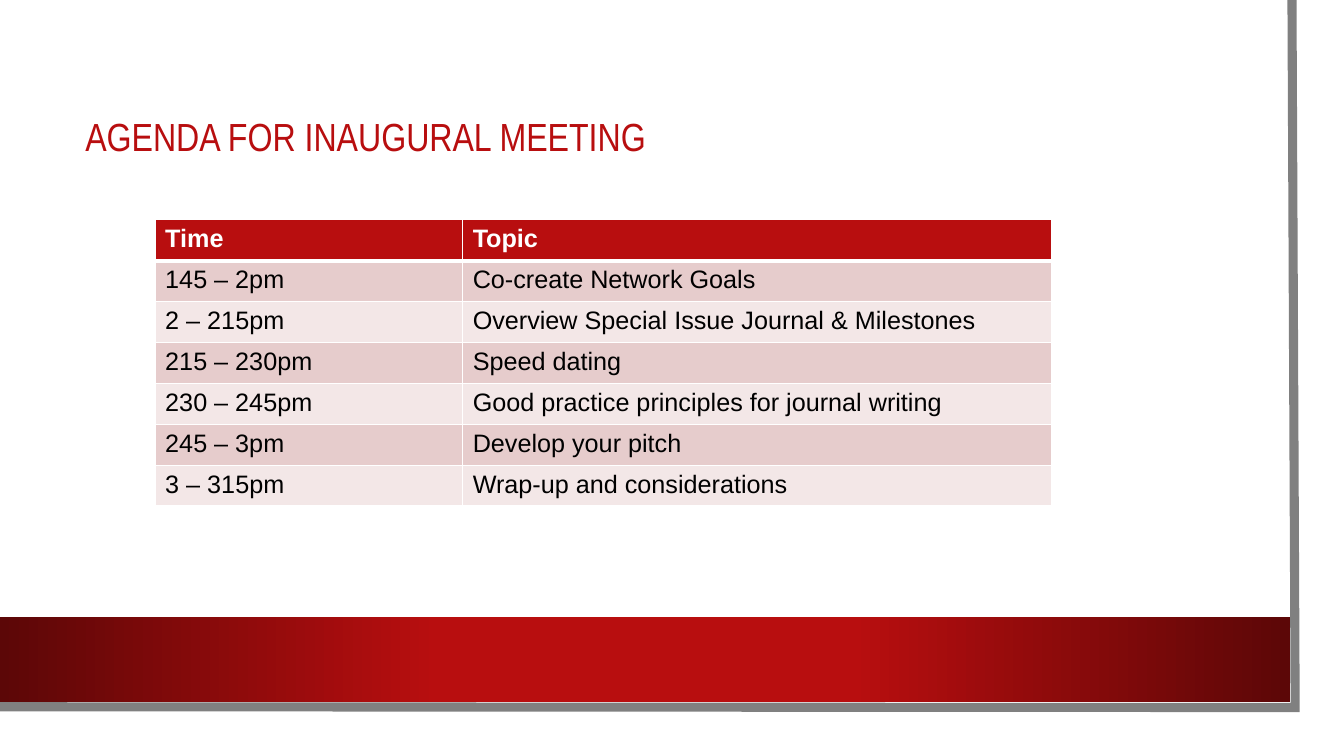
from copy import deepcopy
from dataclasses import dataclass

from lxml import etree
from pptx import Presentation
from pptx.dml.color import RGBColor
from pptx.enum.shapes import MSO_SHAPE
from pptx.enum.text import MSO_ANCHOR
from pptx.oxml.ns import qn
from pptx.util import Cm, Pt

RECTANGLE = MSO_SHAPE.RECTANGLE
MIDDLE = MSO_ANCHOR.MIDDLE


@dataclass(frozen=True)
class Theme:
    white: str = "FFFFFF"
    black: str = "000000"
    red: str = "B80E0F"
    dark_red: str = "5C0707"
    grey: str = "808080"
    stripes: tuple = ("E6CCCC", "F3E7E7")
    title_font: str = "Arial Narrow"
    body_font: str = "Arial"
    title_size: int = 28
    body_size: int = 18
    edge_width: float = 6.5
    cell_line: int = 1
    header_line: int = 3


THEME = Theme()

AGENDA = [
    ("Time", "Topic"),
    ("145 – 2pm", "Co-create Network Goals"),
    ("2 – 215pm", "Overview Special Issue Journal & Milestones"),
    ("215 – 230pm", "Speed dating"),
    ("230 – 245pm", "Good practice principles for journal writing"),
    ("245 – 3pm", "Develop your pitch"),
    ("3 – 315pm", "Wrap-up and considerations"),
]
COLUMN_WIDTHS = (7.75, 14.83)
ROW_HEIGHT = 1.03


def write(frame, text, color, **font_values):
    """Put one formatted paragraph into a text frame."""
    paragraph = frame.paragraphs[0]
    run = paragraph.add_run()
    run.text = text
    for name, value in font_values.items():
        setattr(run.font, name, value)
    run.font.color.rgb = RGBColor.from_string(color)
    return paragraph


def add_panel(slide, left, top, width, height):
    panel = slide.shapes.add_shape(
        RECTANGLE, Cm(left), Cm(top), Cm(width), Cm(height))
    panel.shadow.inherit = False
    panel.line.fill.background()
    return panel


def add_sheet(slide):
    sheet = add_panel(slide, 0, 0, 33.27, 18.47)
    sheet.fill.solid()
    sheet.fill.fore_color.rgb = RGBColor.from_string(THEME.white)


def add_edge(slide):
    """Grey line down the right side and along the bottom."""
    outline = slide.shapes.build_freeform(Cm(32.56), Cm(0))
    outline.add_line_segments(
        [(Cm(32.64), Cm(17.83)), (Cm(-0.08), Cm(17.81))], close=False)
    edge = outline.convert_to_shape()
    edge.shadow.inherit = False
    edge.fill.background()
    edge.line.color.rgb = RGBColor.from_string(THEME.grey)
    edge.line.width = Pt(THEME.edge_width)
    etree.SubElement(edge.line._get_or_add_ln(), qn("a:miter"), lim="800000")


def add_band(slide):
    """Red band that darkens towards both ends."""
    band = add_panel(slide, 0, 15.54, 32.51, 2.16)
    band.fill.gradient()
    band.fill.gradient_angle = 0
    stop_list = band._element.spPr.find(".//" + qn("a:gsLst"))
    for stop in list(stop_list):
        stop_list.append(deepcopy(stop))
    positions = (0, 0.34, 0.66, 1)
    colors = (THEME.dark_red, THEME.red, THEME.red, THEME.dark_red)
    for stop, position, color in zip(
            band.fill.gradient_stops, positions, colors):
        stop.position = position
        stop.color.rgb = RGBColor.from_string(color)


def add_title(slide, text):
    title = slide.shapes.add_textbox(Cm(1.9), Cm(1.9), Cm(28.88), Cm(3.2))
    title.text_frame.word_wrap = True
    title.text_frame.vertical_anchor = MIDDLE
    line = write(title.text_frame, text, THEME.red,
                 name=THEME.title_font, size=Pt(THEME.title_size))
    line.line_spacing = 0.9


def set_borders(cell, top, bottom):
    """Draw white borders; they precede the fill in the cell properties."""
    properties = cell._tc.get_or_add_tcPr()
    widths = {"a:lnL": THEME.cell_line, "a:lnR": THEME.cell_line,
              "a:lnT": top, "a:lnB": bottom}
    for index, (tag, width) in enumerate(widths.items()):
        border = etree.Element(qn(tag), w=str(Pt(width)))
        fill = etree.SubElement(border, qn("a:solidFill"))
        etree.SubElement(fill, qn("a:srgbClr"), val=THEME.white)
        properties.insert(index, border)


def add_agenda(slide, rows):
    agenda = slide.shapes.add_table(
        len(rows), len(COLUMN_WIDTHS), Cm(3.91), Cm(5.54),
        Cm(sum(COLUMN_WIDTHS)), Cm(ROW_HEIGHT * len(rows))).table
    agenda.horz_banding = False
    for column, width in zip(agenda.columns, COLUMN_WIDTHS):
        column.width = Cm(width)
    for r, entries in enumerate(rows):
        agenda.rows[r].height = Cm(ROW_HEIGHT)
        header = r == 0
        background = THEME.red if header else THEME.stripes[(r - 1) % 2]
        for c, entry in enumerate(entries):
            cell = agenda.cell(r, c)
            cell.fill.solid()
            cell.fill.fore_color.rgb = RGBColor.from_string(background)
            write(cell.text_frame, entry,
                  THEME.white if header else THEME.black,
                  name=THEME.body_font, size=Pt(THEME.body_size), bold=header)
            set_borders(
                cell,
                top=THEME.header_line if r == 1 else THEME.cell_line,
                bottom=THEME.header_line if header else THEME.cell_line)


def main():
    deck = Presentation()
    deck.slide_width, deck.slide_height = Cm(33.87), Cm(19.05)
    slide = deck.slides.add_slide(deck.slide_layouts[6])

    # Backdrop
    add_sheet(slide)
    add_edge(slide)
    add_band(slide)

    # Content
    add_title(slide, "AGENDA FOR INAUGURAL MEETING")
    add_agenda(slide, AGENDA)

    deck.save("out.pptx")


if __name__ == "__main__":
    main()
